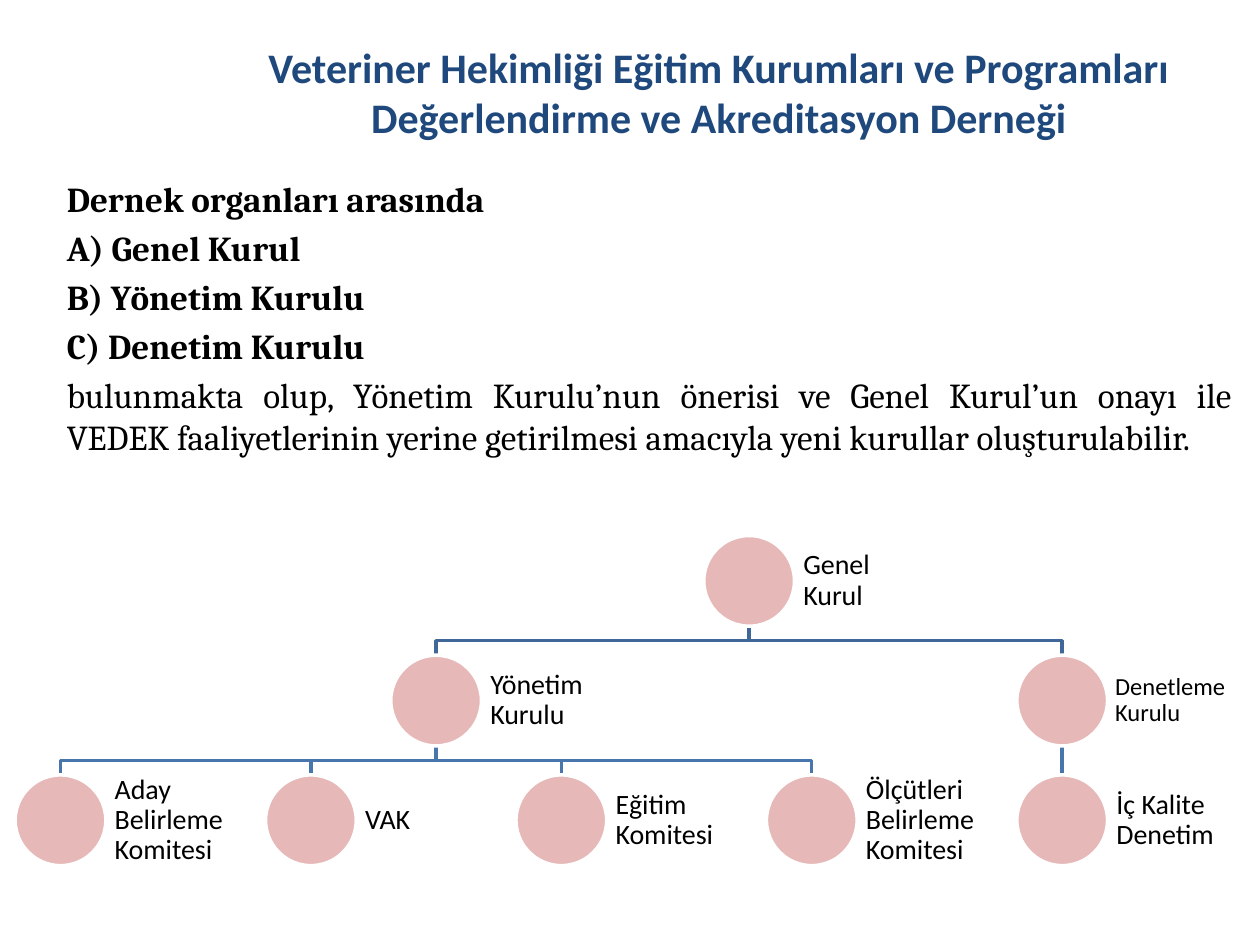
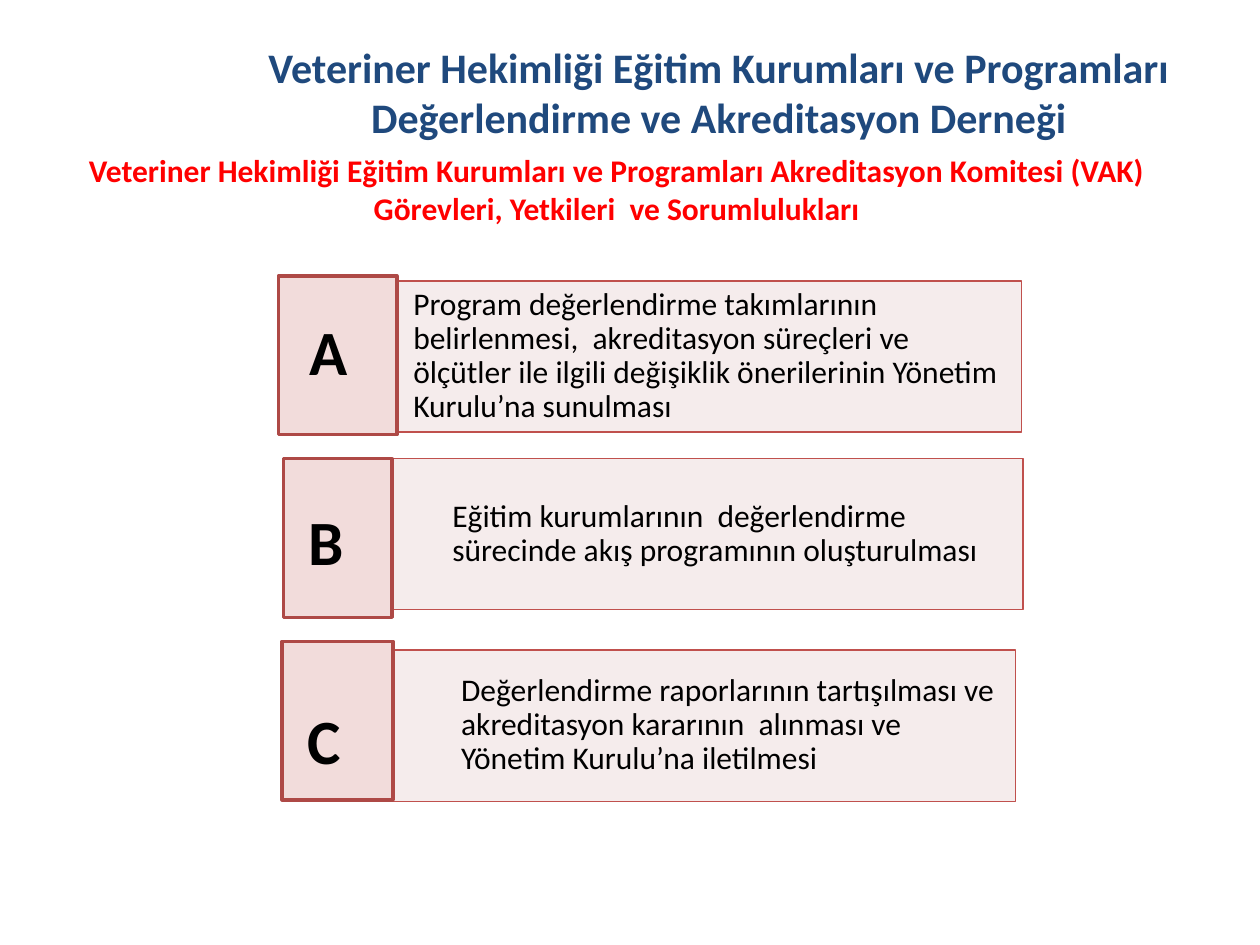
from dataclasses import dataclass

from lxml.etree import SubElement
from pptx import Presentation
from pptx.dml.color import RGBColor
from pptx.enum.shapes import MSO_CONNECTOR, MSO_SHAPE
from pptx.enum.text import MSO_ANCHOR, MSO_AUTO_SIZE, PP_ALIGN
from pptx.oxml.ns import qn
from pptx.util import Inches, Pt


@dataclass(frozen=True)
class Theme:
    sans: str = "Calibri"
    serif: str = "Cambria"
    black: str = "000000"
    white: str = "FFFFFF"
    title: str = "1F497D"
    subtitle: str = "FF0000"
    node: str = "E6B9B8"
    branches: tuple[str, ...] = ("3F6797", "4875AC")  # by chart level
    panel: str = "E8D0D0"
    panel_line: str = "C0504D"
    panel_opacity: int = 40
    tile: str = "F2DCDB"
    tile_line: str = "AE4946"
    title_size: int = 24
    body_size: int = 20
    subtitle_size: int = 18
    node_size: int = 16
    small_node_size: int = 14
    duty_size: int = 18
    letter_size: int = 36
    thin: float = 0.75
    thick: float = 2


@dataclass(frozen=True)
class Box:
    left: float
    top: float
    width: float
    height: float

    def emu(self) -> tuple:
        return tuple(Inches(v) for v in (self.left, self.top, self.width, self.height))


@dataclass(frozen=True)
class Organ:
    name: str
    children: tuple["Organ", ...] = ()
    size: int = Theme.node_size


@dataclass(frozen=True)
class Duty:
    letter: str
    text: str
    panel: Box
    tile: Box
    letter_box: Box


THEME = Theme()
TITLE = ("Veteriner Hekimliği Eğitim Kurumları ve Programları "
         "Değerlendirme ve Akreditasyon Derneği")
TITLE_BOX = Box(1.77, 0.28, 7.87, 0.79)

# Slide 1 content
ORGANS_HEADING = ["Dernek organları arasında", "A) Genel Kurul",
                  "B) Yönetim Kurulu", "C) Denetim Kurulu"]
ORGANS_NOTE = ("bulunmakta olup, Yönetim Kurulu’nun önerisi ve Genel Kurul’un onayı ile "
               "VEDEK faaliyetlerinin yerine getirilmesi amacıyla yeni kurullar oluşturulabilir.")
CHART = Organ("Genel Kurul", (
    Organ("Yönetim Kurulu", (
        Organ("Aday Belirleme Komitesi"),
        Organ("VAK"),
        Organ("Eğitim Komitesi"),
        Organ("Ölçütleri Belirleme Komitesi"),
    )),
    Organ("Denetleme Kurulu", (Organ("İç Kalite Denetim"),), THEME.small_node_size),
))
DIAMETER, LABEL_WIDTH = 0.72, 1.08
FIRST_LEAF, LEAF_STEP = 0.48, 1.9875
CHART_TOP, LEVEL_STEP = 4.25, 0.95

# Slide 2 content
SUBTITLE = ("Veteriner Hekimliği Eğitim Kurumları ve Programları Akreditasyon Komitesi (VAK)\v"
            "Görevleri, Yetkileri  ve Sorumlulukları")
DUTIES = [
    Duty("A", "Program değerlendirme takımlarının belirlenmesi,  akreditasyon süreçleri ve "
         "ölçütler ile ilgili değişiklik önerilerinin Yönetim Kurulu’na sunulması",
         Box(2.43, 2.23, 5.68, 1.2), Box(2.21, 2.19, 0.94, 1.26), Box(2.35, 2.43, 0.51, 0.68)),
    Duty("B", "Eğitim kurumlarının  değerlendirme sürecinde akış programının oluşturulması",
         Box(2.74, 3.64, 5.38, 1.2), Box(2.25, 3.64, 0.86, 1.26), Box(2.35, 3.94, 0.48, 0.68)),
    Duty("C", "Değerlendirme raporlarının tartışılması ve akreditasyon kararının  alınması ve "
         "Yönetim Kurulu’na iletilmesi",
         Box(2.81, 5.16, 5.25, 1.2), Box(2.24, 5.09, 0.88, 1.26), Box(2.35, 5.52, 0.44, 0.68)),
]


# Shared helpers
def rgb(color: str) -> RGBColor:
    return RGBColor.from_string(color)


def style(paragraph, size: int, color: str = THEME.black, bold: bool = False,
          align=PP_ALIGN.LEFT, font: str = THEME.sans) -> None:
    paragraph.alignment = align
    paragraph.font.name = font
    paragraph.font.size = Pt(size)
    paragraph.font.bold = bold
    paragraph.font.color.rgb = rgb(color)


def set_frame(shape, anchor, insets: tuple | None = None, wrap: bool = True):
    frame = shape.text_frame
    frame.word_wrap = wrap
    frame.auto_size = MSO_AUTO_SIZE.NONE
    frame.vertical_anchor = anchor
    if insets:
        (frame.margin_left, frame.margin_top,
         frame.margin_right, frame.margin_bottom) = (Inches(v) for v in insets)
    return frame


def place(shape, box: Box) -> None:
    shape.left, shape.top, shape.width, shape.height = box.emu()


def add_filled(slide, kind, box: Box, fill: str, line: str, width: float):
    shape = slide.shapes.add_shape(kind, *box.emu())
    shape.shadow.inherit = False
    shape.fill.solid()
    shape.fill.fore_color.rgb = rgb(fill)
    shape.line.color.rgb = rgb(line)
    shape.line.width = Pt(width)
    return shape


def fill_heading(placeholder, text: str, box: Box, size: int, color: str, anchor) -> None:
    place(placeholder, box)
    frame = set_frame(placeholder, anchor)
    frame.text = text
    paragraph = frame.paragraphs[0]
    paragraph.space_before = Pt(0)
    style(paragraph, size, color, True, PP_ALIGN.CENTER)


def add_titled_slide(presentation, layout: int):
    slide = presentation.slides.add_slide(presentation.slide_layouts[layout])
    fill_heading(slide.shapes.title, TITLE, TITLE_BOX, THEME.title_size,
                 THEME.title, MSO_ANCHOR.TOP)
    return slide


# Organisation chart: each parent stands over the middle of its children
def leaf_count(organ: Organ) -> int:
    return sum(map(leaf_count, organ.children)) or 1


def center_of(organ: Organ, first_leaf: int) -> float:
    if not organ.children:
        return FIRST_LEAF + LEAF_STEP * first_leaf
    centers = child_centers(organ, first_leaf)
    return sum(centers) / len(centers)


def child_centers(organ: Organ, first_leaf: int) -> list[float]:
    centers = []
    for child in organ.children:
        centers.append(center_of(child, first_leaf))
        first_leaf += leaf_count(child)
    return centers


def add_branch(slide, parent: float, child: float, level: int) -> None:
    start = CHART_TOP + LEVEL_STEP * level + DIAMETER
    end = CHART_TOP + LEVEL_STEP * (level + 1)
    middle = (start + end) / 2
    if abs(parent - child) < 0.01:
        branch = slide.shapes.add_connector(
            MSO_CONNECTOR.STRAIGHT, Inches(parent), Inches(start), Inches(child), Inches(end))
        SubElement(branch._element.spPr, qn("a:effectLst"))
    else:
        builder = slide.shapes.build_freeform(Inches(parent), Inches(start))
        corners = [(parent, middle), (child, middle), (child, end)]
        builder.add_line_segments([(Inches(x), Inches(y)) for x, y in corners], close=False)
        branch = builder.convert_to_shape()
        branch.fill.background()
        branch.shadow.inherit = False
    branch.line.color.rgb = rgb(THEME.branches[level])
    branch.line.width = Pt(THEME.thick)


def add_organ(slide, organ: Organ, level: int = 0, first_leaf: int = 0) -> None:
    center = center_of(organ, first_leaf)
    for child_center in child_centers(organ, first_leaf):
        add_branch(slide, center, child_center, level)

    top = CHART_TOP + LEVEL_STEP * level
    add_filled(slide, MSO_SHAPE.OVAL, Box(center - DIAMETER / 2, top, DIAMETER, DIAMETER),
               THEME.node, THEME.white, THEME.thick)
    label_box = Box(center + DIAMETER / 2, top, LABEL_WIDTH, DIAMETER)
    label = slide.shapes.add_textbox(*label_box.emu())
    inset = 0.07 if organ.size == THEME.node_size else 0.06
    frame = set_frame(label, MSO_ANCHOR.MIDDLE, (inset,) * 4)
    frame.text = organ.name
    frame.paragraphs[0].line_spacing = 0.9
    style(frame.paragraphs[0], organ.size)

    for child in organ.children:
        add_organ(slide, child, level + 1, first_leaf)
        first_leaf += leaf_count(child)


def add_duty(slide, duty: Duty) -> None:
    panel = add_filled(slide, MSO_SHAPE.RECTANGLE, duty.panel, THEME.panel,
                       THEME.panel_line, THEME.thin)
    color = panel._element.spPr.find(qn("a:solidFill"))[0]
    SubElement(color, qn("a:alpha"), val=str(THEME.panel_opacity * 1000))
    frame = set_frame(panel, MSO_ANCHOR.MIDDLE, (0.85, 0.07, 0.07, 0.07))
    frame.text = duty.text
    frame.paragraphs[0].line_spacing = 0.9
    style(frame.paragraphs[0], THEME.duty_size)

    add_filled(slide, MSO_SHAPE.RECTANGLE, duty.tile, THEME.tile, THEME.tile_line, THEME.thick)
    letter = slide.shapes.add_textbox(*duty.letter_box.emu())
    frame = set_frame(letter, MSO_ANCHOR.TOP, wrap=False)
    frame.text = duty.letter
    style(frame.paragraphs[0], THEME.letter_size, bold=True, align=PP_ALIGN.CENTER)


# Slides
def build_organs_slide(presentation) -> None:
    slide = add_titled_slide(presentation, 1)
    body = slide.placeholders[1]
    place(body, Box(0.43, 1.36, 9.45, 2.39))
    frame = set_frame(body, MSO_ANCHOR.TOP)
    frame.text = "\n".join([*ORGANS_HEADING, ORGANS_NOTE])
    for paragraph in frame.paragraphs:
        style(paragraph, THEME.body_size, bold=paragraph.text != ORGANS_NOTE,
              align=PP_ALIGN.JUSTIFY, font=THEME.serif)
        properties = paragraph._p.get_or_add_pPr()
        properties.set("marL", "0")
        properties.set("indent", "0")
        properties.insert_element_before(
            properties.makeelement(qn("a:buNone")), "a:tabLst", "a:defRPr", "a:extLst")
    add_organ(slide, CHART)


def build_duties_slide(presentation) -> None:
    slide = add_titled_slide(presentation, 0)
    fill_heading(slide.placeholders[1], SUBTITLE, Box(0.3, 1.09, 9.19, 0.82),
                 THEME.subtitle_size, THEME.subtitle, MSO_ANCHOR.MIDDLE)
    for duty in DUTIES:
        add_duty(slide, duty)


def main() -> None:
    presentation = Presentation()
    presentation.slide_width, presentation.slide_height = Inches(10), Inches(7.5)
    build_organs_slide(presentation)
    build_duties_slide(presentation)
    presentation.save("out.pptx")


if __name__ == "__main__":
    main()
